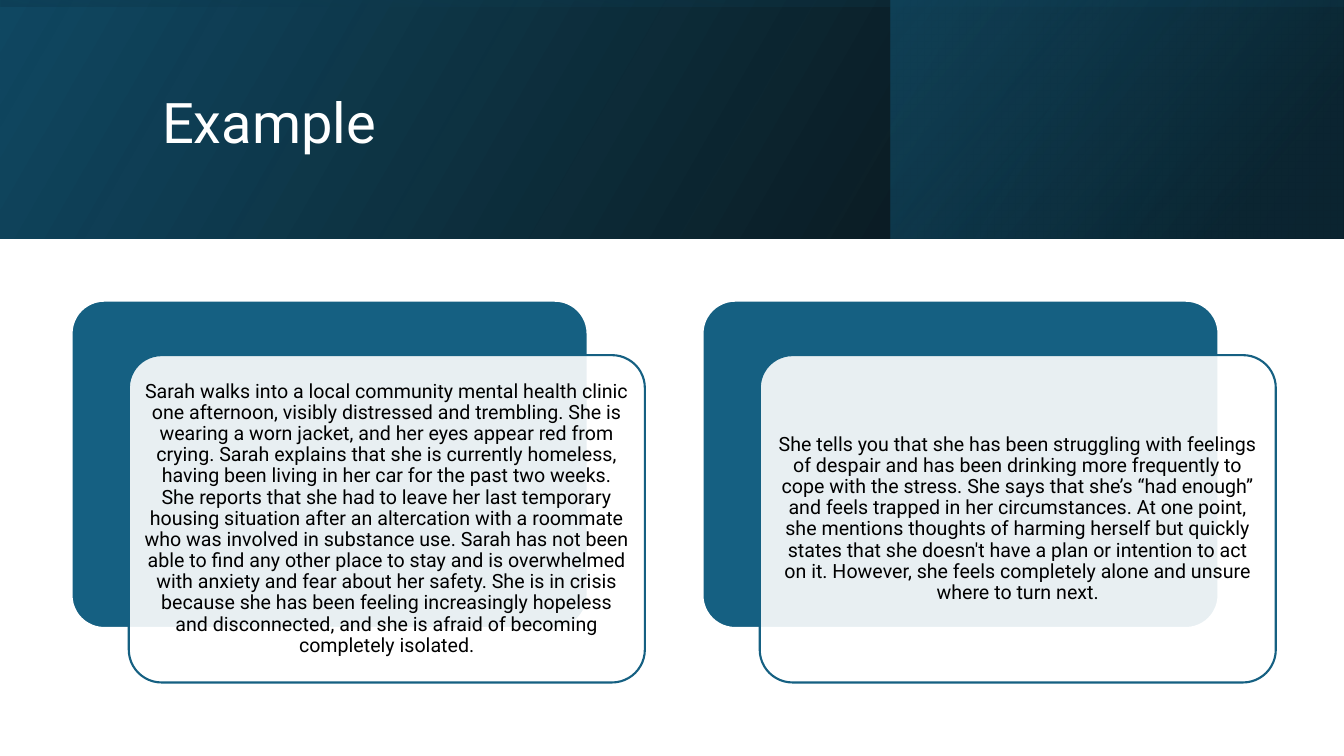
"""Build the Example slide: a gradient banner above two layered story cards."""
from dataclasses import dataclass
from typing import Any

from lxml.etree import SubElement as Sub
from pptx import Presentation as Deck
from pptx.dml.color import RGBColor as Rgb
from pptx.enum.shapes import MSO_SHAPE as Kind
from pptx.enum.text import MSO_ANCHOR as Anchor, PP_ALIGN as Align
from pptx.oxml.ns import qn
from pptx.util import Pt

FONT = "Roboto"
TEAL, WHITE, BLACK = "156082", "FFFFFF", "000000"
WIDE, HIGH = 960, 540
BAND = 170.64


@dataclass
class Box:
    left: float
    top: float
    width: float
    height: float

    def shift(self, right: float, down: float) -> "Box":
        return Box(self.left + right, self.top + down, self.width, self.height)

    def inset(self, gap: float) -> "Box":
        return Box(self.left + gap, self.top + gap,
                   self.width - 2 * gap, self.height - 2 * gap)

    def size(self) -> list:
        return [Pt(n) for n in (self.left, self.top, self.width, self.height)]


@dataclass
class Stop:
    spot: int
    color: str
    alpha: int = 100


@dataclass
class Fade:
    box: Box
    angle: int
    stops: list[Stop]
    turn: int = 0


FADES = [
    Fade(Box(0, 0, WIDE, BAND), 330, [Stop(0, BLACK, 96), Stop(100, "104862")]),
    Fade(Box(636.5, 0, 323, BAND), 320,
         [Stop(19, "0B3041", 68), Stop(100, TEAL, 48)]),
    Fade(Box((WIDE - BAND) / 2, (BAND - WIDE) / 2, BAND, WIDE), 350,
         [Stop(23, "104862", 16), Stop(99, BLACK, 45)], 270),
]

STORY = [
    "Sarah walks into a local community mental health clinic one afternoon, "
    "visibly distressed and trembling. She is wearing a worn jacket, and her "
    "eyes appear red from crying. Sarah explains that she is currently "
    "homeless, having been living in her car for the past two weeks. She "
    "reports that she had to leave her last temporary housing situation after "
    "an altercation with a roommate who was involved in substance use. Sarah "
    "has not been able to find any other place to stay and is overwhelmed with "
    "anxiety and fear about her safety. She is in crisis because she has been "
    "feeling increasingly hopeless and disconnected, and she is afraid of "
    "becoming completely isolated.",
    "She tells you that she has been struggling with feelings of despair and "
    "has been drinking more frequently to cope with the stress. She says that "
    "she’s “had enough” and feels trapped in her circumstances. At one point, "
    "she mentions thoughts of harming herself but quickly states that she "
    "doesn't have a plan or intention to act on it. However, she feels "
    "completely alone and unsure where to turn next.",
]
CARD = Box(51.1, 214.8, 368.6, 233.8)
STEP = 450.7


def paint(color: str) -> Rgb:
    return Rgb.from_string(color)


def add_alpha(node: Any, alpha: int) -> None:
    Sub(node, qn("a:alpha"), val=str(alpha * 1000))


def add_fade(shapes: Any, fade: Fade) -> None:
    shape = shapes.add_shape(Kind.RECTANGLE, *fade.box.size())
    shape.shadow.inherit = False
    shape.line.fill.background()
    shape.rotation = fade.turn
    props = shape._element.spPr
    props.find(qn("a:xfrm")).set("flipH", "1")
    shape.fill.gradient()
    grad = props.find(qn("a:gradFill"))
    for child in list(grad):
        grad.remove(child)
    grad.set("rotWithShape", "1")
    stops = Sub(grad, qn("a:gsLst"))
    for stop in fade.stops:
        node = Sub(stops, qn("a:gs"), pos=str(stop.spot * 1000))
        add_alpha(Sub(node, qn("a:srgbClr"), val=stop.color), stop.alpha)
    Sub(grad, qn("a:lin"), ang=str(fade.angle * 60000), scaled="0")


def add_panel(shapes: Any, box: Box, fill: str, line: str, alpha: int) -> None:
    shape = shapes.add_shape(Kind.ROUNDED_RECTANGLE, *box.size())
    shape.adjustments[0] = 0.1
    shape.shadow.inherit = False
    shape.fill.solid()
    shape.fill.fore_color.rgb = paint(fill)
    shape.line.color.rgb = paint(line)
    shape.line.width = Pt(1.5)
    if alpha < 100:
        add_alpha(shape._element.spPr.find(qn("a:solidFill"))[0], alpha)


def add_text(shapes: Any, box: Box, text: str, size: int, color: str,
             align: Align, pads: tuple[float, float]) -> None:
    frame = shapes.add_textbox(*box.size()).text_frame
    frame.word_wrap = True
    frame.vertical_anchor = Anchor.MIDDLE
    frame.margin_left = frame.margin_right = Pt(pads[0])
    frame.margin_top = frame.margin_bottom = Pt(pads[1])
    para = frame.paragraphs[0]
    para.alignment = align
    para.line_spacing = 0.9
    run = para.add_run()
    run.text = text
    run.font.name = FONT
    run.font.size = Pt(size)
    run.font.color.rgb = paint(color)


def main() -> None:
    deck = Deck()
    deck.slide_width, deck.slide_height = Pt(WIDE), Pt(HIGH)
    shapes = deck.slides.add_slide(deck.slide_layouts[6]).shapes
    for fade in FADES:
        add_fade(shapes, fade)
    add_text(shapes, Box(108.7, 27.4, 765.4, 123.8), "Example", 40, WHITE,
             Align.LEFT, (7.2, 3.6))
    group = shapes.add_group_shape().shapes
    for index, text in enumerate(STORY):
        back = CARD.shift(index * STEP, 0)
        front = back.shift(40.9, 38.9)
        add_panel(group, back, TEAL, WHITE, 100)
        add_panel(group, front, WHITE, TEAL, 90)
        add_text(group, front.inset(6.85), text, 14, BLACK, Align.CENTER,
                 (4.2, 4.2))
    deck.save("out.pptx")


if __name__ == "__main__":
    main()
